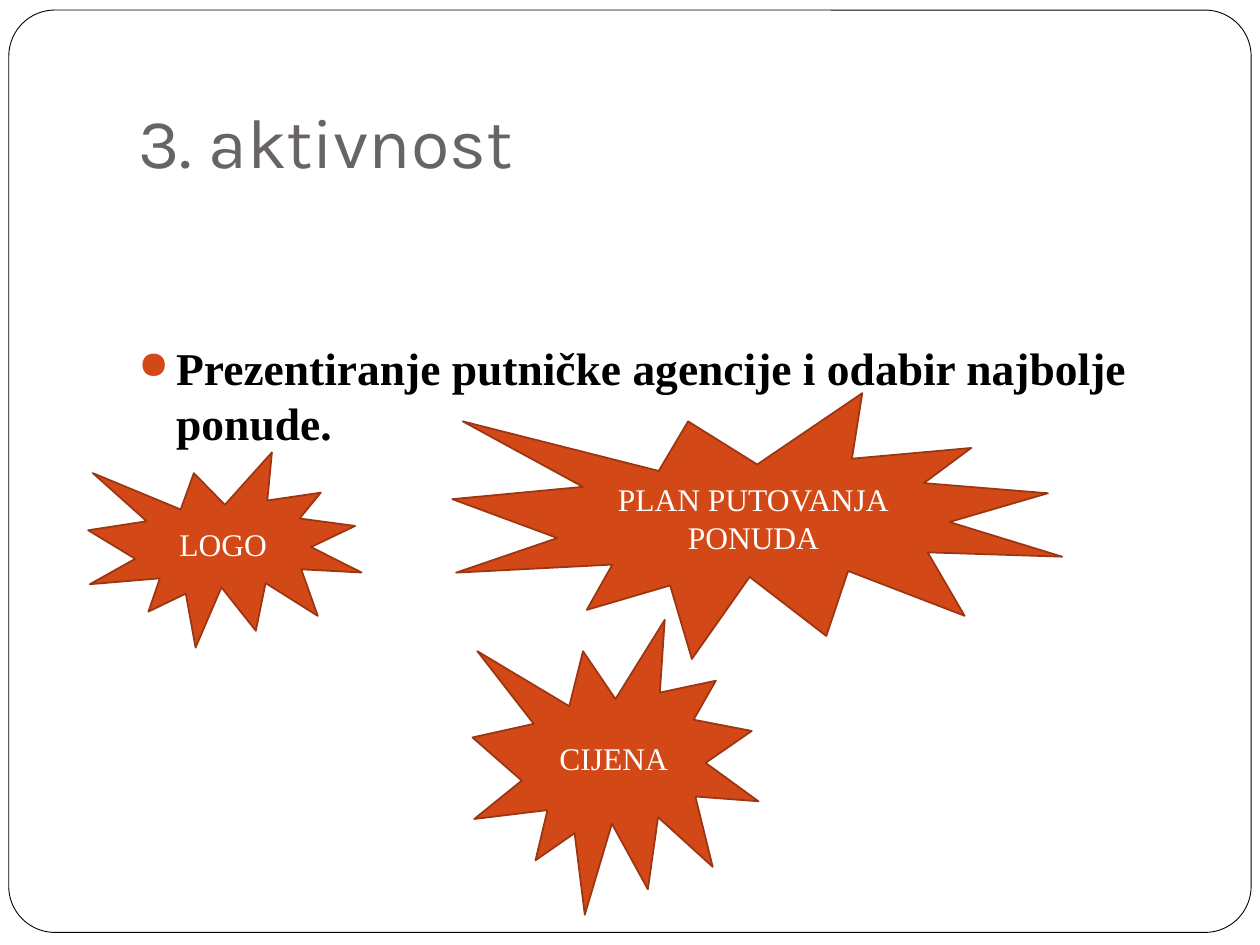
from dataclasses import dataclass

from lxml import etree
from pptx import Presentation
from pptx.dml.color import RGBColor
from pptx.enum import shapes, text
from pptx.oxml import ns
from pptx.util import Inches, Pt


@dataclass(frozen=True)
class Theme:
    paper: str = "FFFFFF"
    ink: str = "000000"
    heading: str = "696464"
    accent: str = "D34817"
    accent_edge: str = "9C3511"
    heading_font: str = "Karla"
    body_font: str = "Times New Roman"
    heading_size: float = 40
    body_size: float = 26
    label_size: float = 18


class SlideBuilder:
    def __init__(self, page, theme):
        self.page = page
        self.theme = theme

    def shape(self, kind, at, fill, line, width):
        box = self.page.shapes.add_shape(kind, *map(Inches, at))
        box.shadow.inherit = False
        box.fill.solid()
        box.fill.fore_color.rgb = RGBColor.from_string(fill)
        box.line.color.rgb = RGBColor.from_string(line)
        box.line.width = Pt(width)
        return box

    def add_span(self, para, words, font, size, color, bold=False):
        span = para.add_run()
        span.text = words
        span.font.name = font
        span.font.size = Pt(size)
        span.font.bold = bold
        span.font.color.rgb = RGBColor.from_string(color)

    def text_box(self, at, anchor, bottom=0.05):
        frame = self.page.shapes.add_textbox(*map(Inches, at)).text_frame
        frame.word_wrap = True
        frame.vertical_anchor = anchor
        frame.margin_bottom = Inches(bottom)
        return frame.paragraphs[0]

    def frame(self, at):
        kind = shapes.MSO_SHAPE.ROUNDED_RECTANGLE
        box = self.shape(kind, at, self.theme.paper, self.theme.ink, 0.5)
        box.adjustments[0] = 0.05

    def title(self, at, words):
        para = self.text_box(at, text.MSO_ANCHOR.BOTTOM, bottom=0.1)
        style = self.theme
        self.add_span(para, words, style.heading_font, style.heading_size, style.heading)

    def bullet(self, at, words):
        para = self.text_box(at, text.MSO_ANCHOR.TOP)
        style = self.theme
        self.add_span(para, words, style.body_font, style.body_size, style.ink, bold=True)
        # Hanging indent and coloured bullet
        props = para._p.get_or_add_pPr()
        props.set("marL", str(Inches(0.3)))
        props.set("indent", str(Inches(-0.3)))
        color = etree.SubElement(props, ns.qn("a:buClr"))
        etree.SubElement(color, ns.qn("a:srgbClr"), val=style.accent)
        etree.SubElement(props, ns.qn("a:buSzPct"), val="85000")
        etree.SubElement(props, ns.qn("a:buChar"), char="●")

    def burst(self, at, lines):
        style = self.theme
        kind = shapes.MSO_SHAPE.EXPLOSION1
        box = self.shape(kind, at, style.accent, style.accent_edge, 1)
        frame = box.text_frame
        frame.word_wrap = True
        frame.vertical_anchor = text.MSO_ANCHOR.MIDDLE
        for index, words in enumerate(lines):
            para = frame.add_paragraph() if index else frame.paragraphs[0]
            para.alignment = text.PP_ALIGN.CENTER
            self.add_span(para, words, style.body_font, style.label_size, style.paper)


def main():
    deck = Presentation()
    deck.slide_width, deck.slide_height = Inches(10), Inches(7.5)
    page = deck.slides.add_slide(deck.slide_layouts[6])
    builder = SlideBuilder(page, Theme())

    # Page frame, heading and task
    builder.frame((0.07, 0.08, 9.86, 7.32))
    builder.title((1, 0.3, 8.5, 1.25), "3. aktivnost")
    builder.bullet((1, 2.65, 8.5, 1),
                   "Prezentiranje putničke agencije i odabir najbolje ponude.")

    # Parts of the presentation
    builder.burst((0.7, 3.59, 2.17, 1.55), ["LOGO"])
    builder.burst((3.59, 3.12, 4.84, 2.11), ["PLAN PUTOVANJA", "PONUDA"])
    builder.burst((3.75, 4.92, 2.27, 2.34), ["CIJENA"])

    deck.save("out.pptx")


if __name__ == "__main__":
    main()
